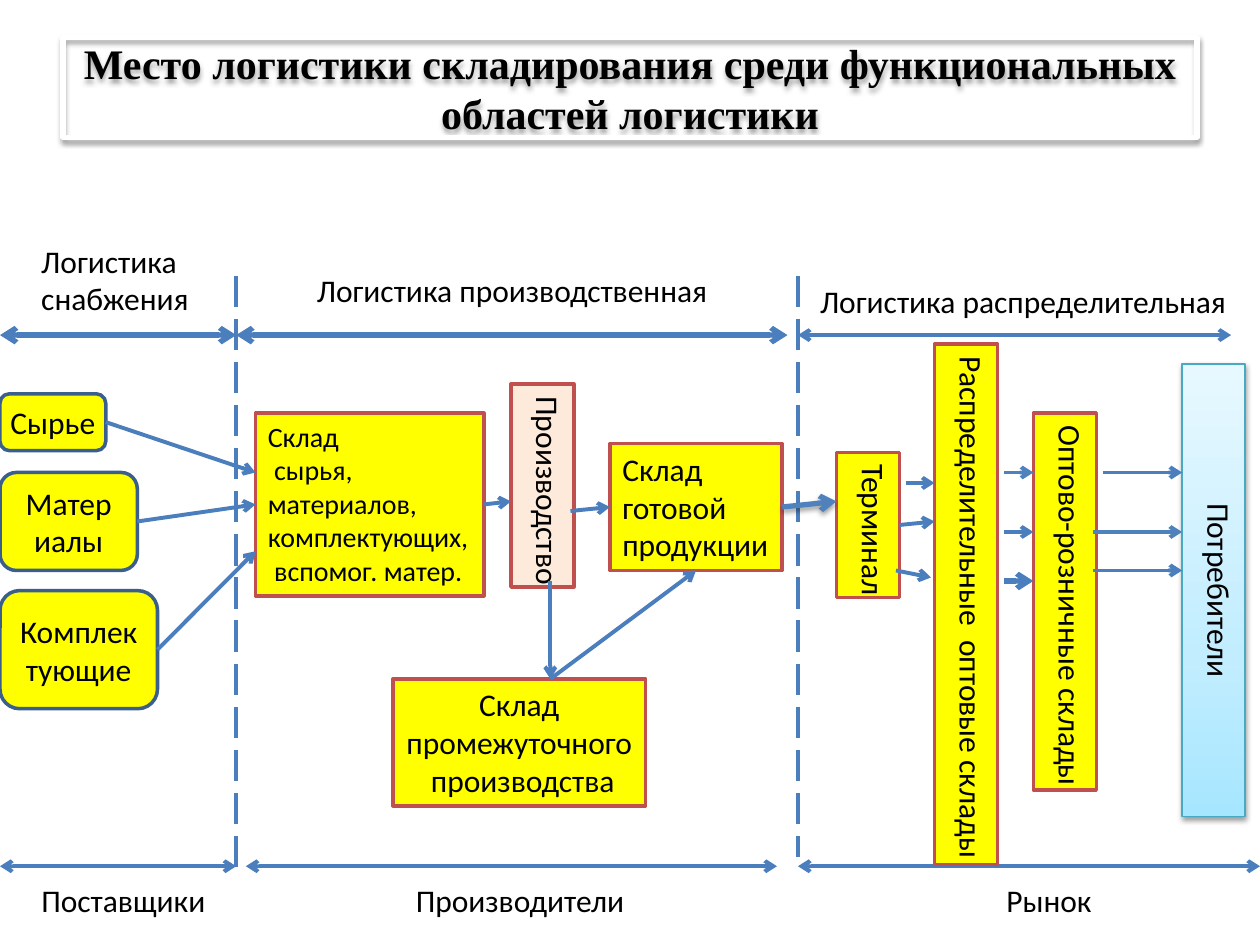
from lxml import etree
from copy import deepcopy
from pptx import Presentation
from pptx.dml.color import RGBColor
from pptx.enum import dml, shapes, text
from pptx.oxml import parse_xml
from pptx.oxml.ns import nsdecls, qn
from pptx.util import Pt

BLACK = RGBColor(0, 0, 0)
WHITE = RGBColor(255, 255, 255)
YELLOW = RGBColor(0xFF, 0xFF, 0x00)
PEACH = RGBColor(0xFD, 0xEA, 0xDA)
RED = RGBColor(0xC0, 0x50, 0x4D)
NAVY = RGBColor(0x3A, 0x5F, 0x8C)
BLUE = RGBColor(0x4B, 0x7E, 0xBC)
BRIGHT_BLUE = RGBColor(0x4F, 0x81, 0xBD)
TEAL = RGBColor(0x46, 0xAA, 0xC5)
ICE = [RGBColor(0xA7, 0xE6, 0xFF), RGBColor(0xC1, 0xED, 0xFF), RGBColor(0xE7, 0xF8, 0xFF)]

RECT = shapes.MSO_SHAPE.RECTANGLE
ROUND = shapes.MSO_SHAPE.ROUNDED_RECTANGLE
LEFT, CENTER = text.PP_ALIGN.LEFT, text.PP_ALIGN.CENTER
TOP, MIDDLE = text.MSO_ANCHOR.TOP, text.MSO_ANCHOR.MIDDLE
SITE_LEFT, SITE_BOTTOM, SITE_RIGHT = 1, 2, 3


def write(box, lines, size=18, font="Calibri", bold=False, align=LEFT, anchor=TOP,
          wrap=False, grow=True, vertical=False):
    frame = box.text_frame
    frame.word_wrap = wrap
    frame.vertical_anchor = anchor
    if grow:
        frame.auto_size = text.MSO_AUTO_SIZE.SHAPE_TO_FIT_TEXT
    if vertical:
        frame._txBody.bodyPr.set("vert", "vert")
    for index, line in enumerate(lines.split("\n")):
        para = frame.paragraphs[0] if index == 0 else frame.add_paragraph()
        para.alignment = align
        span = para.add_run()
        span.text = line
        span.font.size, span.font.name, span.font.bold = Pt(size), font, bold
        span.font.color.rgb = BLACK


def set_effects(item, shadow=False):
    """Replace the theme effects with a soft drop shadow, or with none."""
    properties = item._element.spPr
    for old in properties.findall(qn("a:effectLst")):
        properties.remove(old)
    effects = parse_xml(f"<a:effectLst {nsdecls('a')}/>")
    if shadow:
        outer = etree.SubElement(effects, qn("a:outerShdw"), blurRad=str(Pt(3.1)),
                                 dist=str(Pt(1.6)), dir="5400000", rotWithShape="0")
        color = etree.SubElement(outer, qn("a:srgbClr"), val="000000")
        etree.SubElement(color, qn("a:alpha"), val="38000")
    properties.append(effects)


def add_label(page, lines, left, top, width, height=29):
    box = page.shapes.add_textbox(Pt(left), Pt(top), Pt(width), Pt(height))
    write(box, lines)


def add_block(page, left, top, width, height, kind=RECT, fill=YELLOW, line=RED,
              weight=2, shadow=False):
    block = page.shapes.add_shape(kind, Pt(left), Pt(top), Pt(width), Pt(height))
    if fill is None:
        block.fill.background()
    else:
        block.fill.solid()
        block.fill.fore_color.rgb = fill
    block.line.color.rgb, block.line.width = line, Pt(weight)
    set_effects(block, shadow)
    return block


def add_line(page, start, end, color=BLUE, weight=2.25, dashed=False, ends=("tailEnd",),
             source=None, target=None, shadow=False):
    """Draw a line; source and target are (shape, site) pairs to join."""
    line = page.shapes.add_connector(shapes.MSO_CONNECTOR.STRAIGHT,
                                     *(Pt(value) for value in (*start, *end)))
    line.line.color.rgb, line.line.width = color, Pt(weight)
    if dashed:
        line.line.dash_style = dml.MSO_LINE.LONG_DASH
    for tag in ends:
        etree.SubElement(line.line._get_or_add_ln(), qn(f"a:{tag}"), type="arrow")
    set_effects(line, shadow)
    if source:
        line.begin_connect(*source)
    if target:
        line.end_connect(*target)


def add_title(page, left, top, width, height):
    frame = add_block(page, left, top, width, height, fill=None, line=WHITE,
                      weight=3, shadow=True)
    write(frame, "Место логистики складирования среди функциональных областей логистики",
          size=24, font="Times New Roman", bold=True, align=CENTER, anchor=MIDDLE,
          wrap=True, grow=False)


def add_zones(page, left, top, width, height):
    """Zone borders, with the logistics types above and the participants below."""
    upper, lower = top + 34, top + 337.5
    first, second, right = left + 135, left + 456, left + width
    add_line(page, (first, top), (first, top + height), dashed=True, ends=())
    add_line(page, (second, top), (second, top + height - 11), dashed=True, ends=())
    spans = [(left, first, upper, 3), (first, second - 6, upper, 3),
             (second, right - 16.5, upper, 2.25), (left, first, lower, 2.25),
             (first + 5.5, second - 12, lower, 2.25), (second, right, lower, 2.25)]
    for begin, end, level, weight in spans:
        add_line(page, (begin, level), (end, level), weight=weight,
                 ends=("headEnd", "tailEnd"))
    add_label(page, "Логистика\nснабжения", left + 16.5, top - 23, 100, 51)
    add_label(page, "Логистика производственная", left + 174, top - 6, 240.5)
    add_label(page, "Логистика распределительная", left + 461.5, top, 258.5)
    for words, offset, size in (("Поставщики", 16.5, 109.5), ("Производители", 230.5, 135.5),
                                ("Рынок", 568, 64)):
        add_label(page, words, left + offset, lower + 5, size)


def add_suppliers(page, left, top):
    goods = [("Сырье", 0, 60.5, 32.5, False), ("Материалы", 45, 78.5, 56, True),
             ("Комплектующие", 112.5, 90, 67.5, True)]
    blocks = []
    for words, offset, width, height, wrap in goods:
        block = add_block(page, left, top + offset, width, height, kind=ROUND, line=NAVY)
        write(block, words, align=CENTER, anchor=MIDDLE, wrap=wrap, grow=False)
        blocks.append(block)
    return blocks


def add_producers(page, left, top, suppliers):
    raw = add_block(page, left, top + 16.5, 130.5, 104.5)
    write(raw, "Склад\n сырья,\nматериалов,\nкомплектующих,\n вспомог. матер.", size=16)
    production = add_block(page, left + 146, top, 36, 116, fill=PEACH)
    write(production, "Производство", vertical=True)
    finished = add_block(page, left + 202.5, top + 34, 98.5, 72.5)
    write(finished, "Склад\nготовой\nпродукции")
    interim = add_block(page, left + 78.5, top + 168.5, 144.5, 72.5)
    write(interim, "Склад\nпромежуточного\n производства", align=CENTER)

    for supplier, level in zip(suppliers, (50.5, 68.5, 95.5)):
        target = (raw, SITE_LEFT) if level == 68.5 else None
        add_line(page, (0, 0), (left, top + level), source=(supplier, SITE_RIGHT),
                 target=target)
    add_line(page, (0, 0), (left + 146, top + 67), source=(raw, SITE_RIGHT))
    add_line(page, (left + 180, top + 72.5), (0, 0), target=(finished, SITE_LEFT))
    junction = (left + 168.5, top + 168.5)
    add_line(page, (left + 168.5, top + 112.5), junction)
    add_line(page, junction, (0, 0), target=(finished, SITE_BOTTOM))
    return finished


def add_market(page, left, top, finished):
    stores = [("Терминал", 0, 62, 83), ("Распределительные  оптовые склады", 56, 0, 297.5),
              ("Оптово-розничные склады", 112.5, 39.5, 215.5)]
    blocks = []
    for words, across, down, height in stores:
        block = add_block(page, left + across, top + down, 36, height)
        write(block, words, vertical=True)
        blocks.append(block)
    add_consumers(page, left + 197.5, top + 11.5, 36, 258.5)

    add_line(page, (0, 0), (left, top + 90), color=BRIGHT_BLUE, weight=3, shadow=True,
             source=(finished, SITE_RIGHT))
    add_line(page, (0, 0), (left + 56, top + 101.5), source=(blocks[0], SITE_RIGHT))
    flows = [(34, 129.5, 54, 133.5, BLUE, 2.25), (39.5, 79.5, 56, 79.5, BLUE, 2.25),
             (96, 73.5, 112.5, 73.5, BRIGHT_BLUE, 2.25), (96, 107.5, 112.5, 107.5, BLUE, 2.25),
             (96, 135.5, 112.5, 135.5, BLUE, 3), (152, 73.5, 197.5, 73.5, BLUE, 2.25),
             (146.5, 107.5, 197.5, 107.5, BRIGHT_BLUE, 2.25),
             (146.5, 129.5, 197.5, 129.5, BLUE, 2.25)]
    for x1, y1, x2, y2, color, weight in flows:
        add_line(page, (left + x1, top + y1), (left + x2, top + y2), color=color,
                 weight=weight)


def add_consumers(page, left, top, width, height):
    block = add_block(page, left, top, width, height, line=TEAL, weight=0.75, shadow=True)
    block.fill.gradient()
    block.fill.gradient_angle = 90
    stop_list = block._element.spPr.find(qn("a:gradFill")).find(qn("a:gsLst"))
    stop_list.insert(1, deepcopy(stop_list[0]))
    for stop, color, position in zip(block.fill.gradient_stops, ICE, (0, 0.35, 1)):
        stop.color.rgb, stop.position = color, position
    write(block, "Потребители", align=CENTER, wrap=True, vertical=True)


def main():
    deck = Presentation()
    deck.slide_width, deck.slide_height = Pt(720), Pt(540)
    page = deck.slides.add_slide(deck.slide_layouts[6])
    add_title(page, 36, 21.5, 648, 57)
    add_zones(page, 0, 157.5, 720, 343)
    suppliers = add_suppliers(page, 0, 225)
    finished = add_producers(page, 146, 219.5, suppliers)
    add_market(page, 478, 196.5, finished)
    deck.save("out.pptx")


if __name__ == "__main__":
    main()
